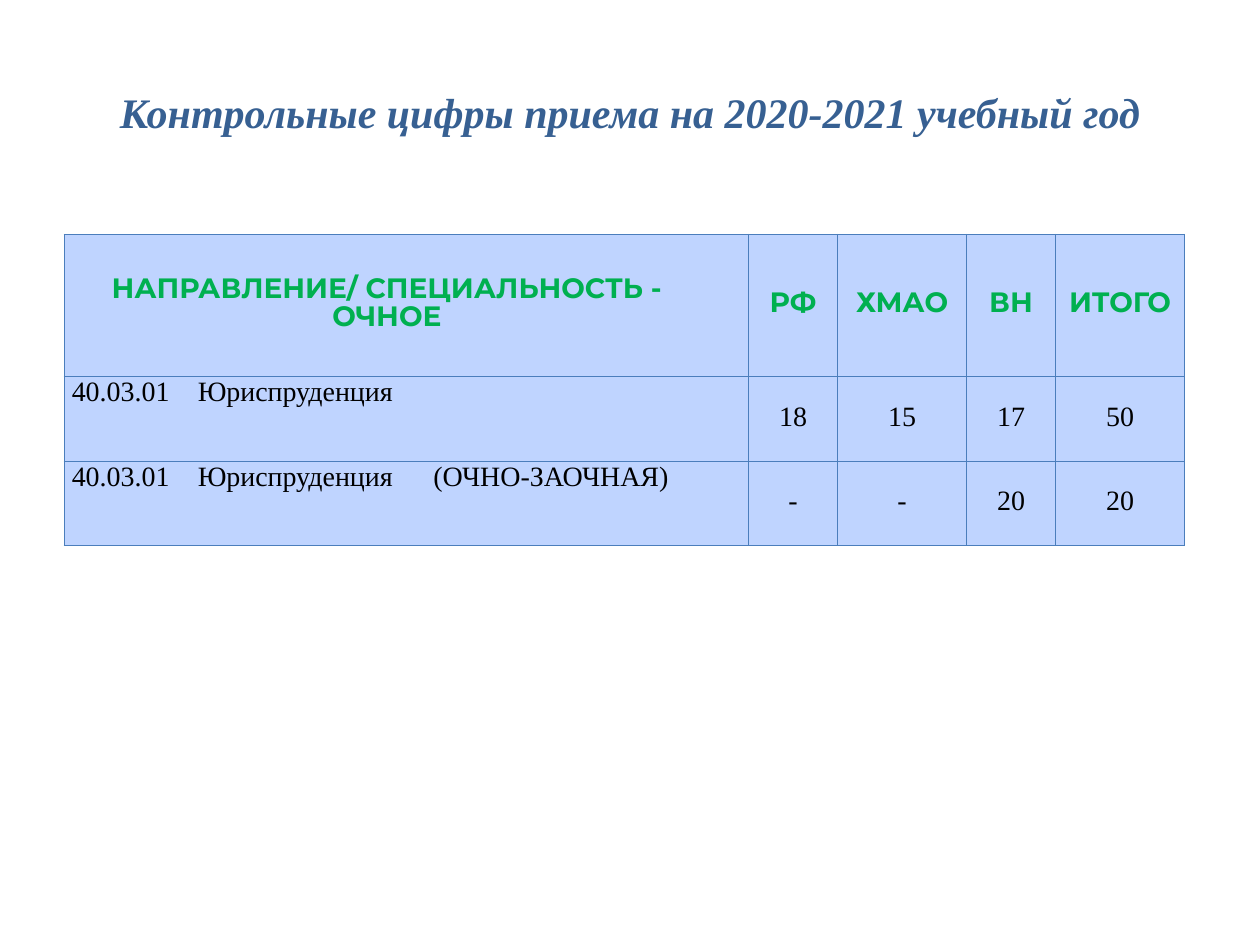
from typing import NamedTuple

from lxml.etree import SubElement
from pptx import Presentation
from pptx.dml.color import RGBColor
from pptx.enum.text import MSO_ANCHOR, PP_ALIGN
from pptx.oxml import parse_xml
from pptx.oxml.ns import nsdecls, qn
from pptx.util import Inches, Pt

SERIF = "Times New Roman"
HEAD = "Montserrat"
BLUE, GREEN, BLACK = "376092", "00B050", "000000"
FILL, EDGE = "BFD4FF", "4B7EBC"
PAD = 0.06
WIDTHS = (5.43, 0.71, 1.02, 0.71, 1.02)


class Row(NamedTuple):
    height: float
    texts: tuple[str, ...]
    head: bool = False


ROWS = (
    Row(1.13, ("НАПРАВЛЕНИЕ/ СПЕЦИАЛЬНОСТЬ - ОЧНОЕ", "РФ", "ХМАО", "ВН", "ИТОГО"), True),
    Row(0.67, ("40.03.01\tЮриспруденция", "18", "15", "17", "50")),
    Row(0.67, ("40.03.01\tЮриспруденция\t(ОЧНО-ЗАОЧНАЯ)", "-", "-", "20", "20")),
)


def color(code: str) -> RGBColor:
    return RGBColor.from_string(code)


def write(frame, text: str, *, font=SERIF, size=16, tint=BLACK, bold=False,
          italic=False, align=PP_ALIGN.CENTER, pitch=None, tabs=()) -> None:
    para = frame.paragraphs[0]
    para.alignment = align
    if pitch:
        para.line_spacing = Pt(pitch)
    if tabs:
        stops = SubElement(para._p.get_or_add_pPr(), qn("a:tabLst"))
        for stop in tabs:
            SubElement(stops, qn("a:tab"), pos=str(Inches(stop)), algn="l")
    run = para.add_run()
    run.text = text
    face = run.font
    face.name, face.size = font, Pt(size)
    face.bold, face.italic = bold, italic
    face.color.rgb = color(tint)


def edge(cell) -> None:
    """Draw a thin line on all four sides of the cell."""
    props = cell._tc.get_or_add_tcPr()
    for i, side in enumerate(("lnL", "lnR", "lnT", "lnB")):
        props.insert(i, parse_xml(
            f'<a:{side} {nsdecls("a")} w="{Pt(0.75)}"><a:solidFill>'
            f'<a:srgbClr val="{EDGE}"/></a:solidFill></a:{side}>'))


def fill_cell(cell, text: str, head: bool, first: bool) -> None:
    cell.fill.solid()
    cell.fill.fore_color.rgb = color(FILL)
    edge(cell)
    cell.margin_left = cell.margin_right = Inches(PAD)
    cell.margin_top = cell.margin_bottom = 0
    if first and not head:
        cell.vertical_anchor = MSO_ANCHOR.TOP
        write(cell.text_frame, text, align=PP_ALIGN.LEFT, tabs=(1, 2.87))
        return
    cell.vertical_anchor = MSO_ANCHOR.MIDDLE
    if first:
        cell.margin_right = Inches(0.37)
    write(cell.text_frame, text, font=HEAD if head else SERIF,
          tint=GREEN if head else BLACK, bold=head, pitch=15.8)


def add_grid(slide, left: float, top: float) -> None:
    height = sum(row.height for row in ROWS)
    table = slide.shapes.add_table(
        len(ROWS), len(WIDTHS), Inches(left), Inches(top),
        Inches(sum(WIDTHS)), Inches(height)).table
    table.first_row = table.horz_banding = False
    for col, width in zip(table.columns, WIDTHS):
        col.width = Inches(width)
    for line, row in zip(table.rows, ROWS):
        line.height = Inches(row.height)
        for i, (cell, text) in enumerate(zip(line.cells, row.texts)):
            fill_cell(cell, text, row.head, i == 0)


def main() -> None:
    deck = Presentation()
    deck.slide_width, deck.slide_height = Inches(10), Inches(7.5)
    slide = deck.slides.add_slide(deck.slide_layouts[5])
    title = slide.shapes.title
    title.left, title.top = Inches(0.5), Inches(0.3)
    title.width, title.height = Inches(9), Inches(1.17)
    title.text_frame.vertical_anchor = MSO_ANCHOR.MIDDLE
    write(title.text_frame, "Контрольные цифры приема на 2020-2021 учебный год",
          size=24, tint=BLUE, bold=True, italic=True)
    add_grid(slide, 0.51, 1.86)
    deck.save("out.pptx")


if __name__ == "__main__":
    main()
